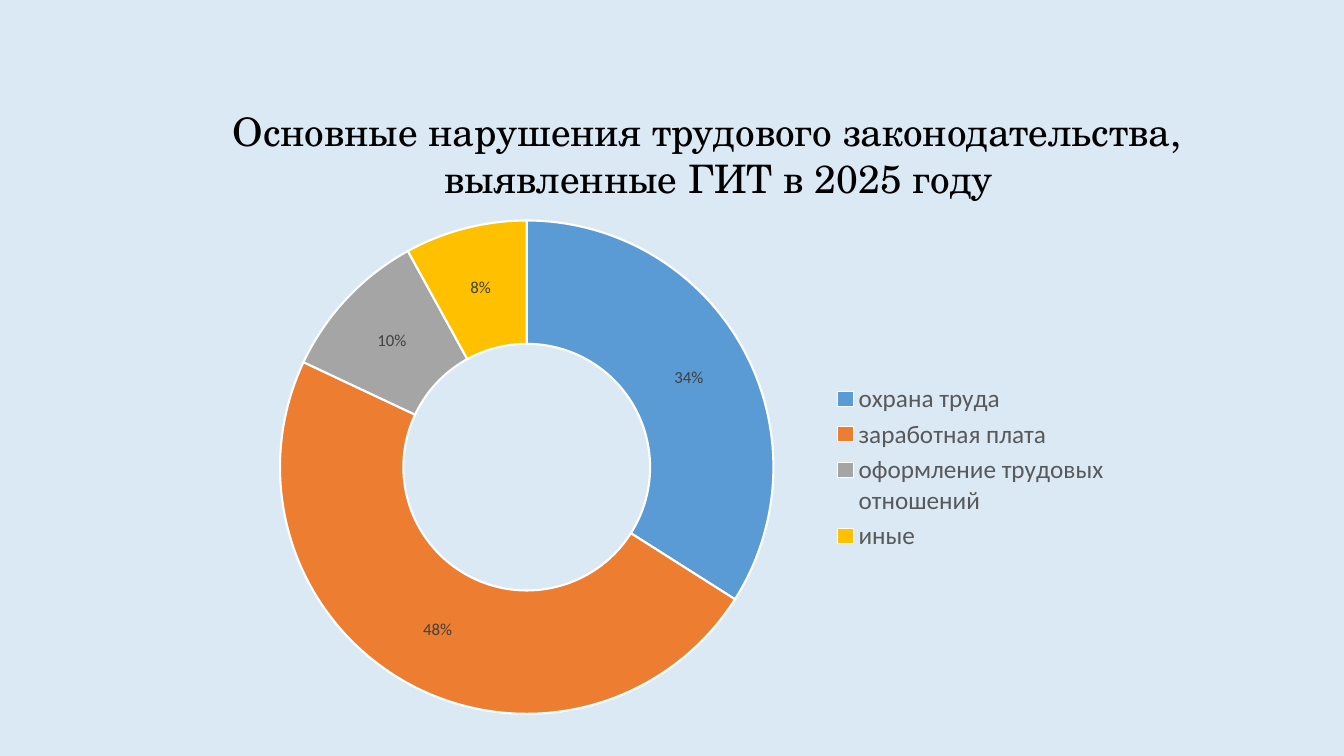
from pptx import Presentation
from pptx.chart.data import CategoryChartData
from pptx.dml.color import RGBColor
from pptx.enum.chart import XL_CHART_TYPE as ChartType, XL_LEGEND_POSITION as LegendPosition
from pptx.enum.text import MSO_ANCHOR as Anchor, MSO_AUTO_SIZE as AutoSize, PP_ALIGN as Align
from pptx.util import Inches, Pt

COLORS = {
    "background": "DBE9F5", "title": "000000", "legend": "595959",
    "labels": "404040", "border": "FFFFFF",
}
VIOLATIONS = [
    ("охрана труда", 0.34, "5B9BD5"),
    ("заработная плата", 0.48, "ED7D31"),
    ("оформление трудовых отношений", 0.10, "A5A5A5"),
    ("иные", 0.08, "FFC000"),
]


def style_font(font, name, size, color):
    font.name, font.size = name, Pt(size)
    font.color.rgb = RGBColor.from_string(COLORS[color])


prs = Presentation()
prs.slide_width, prs.slide_height = Inches(13.33), Inches(7.5)
slide = prs.slides.add_slide(prs.slide_layouts[5])
slide.background.fill.solid()
slide.background.fill.fore_color.rgb = RGBColor.from_string(COLORS["background"])

# Title
title = slide.shapes.title
title.left, title.top = Inches(2.21), Inches(1.01)
title.width, title.height = Inches(9.84), Inches(1.04)
heading = title.text_frame
heading.text = "Основные нарушения трудового законодательства,\nвыявленные ГИТ в 2025 году"
frame_format = {
    "word_wrap": False,
    "auto_size": AutoSize.SHAPE_TO_FIT_TEXT,
    "vertical_anchor": Anchor.TOP,
}
for attribute, value in frame_format.items():
    setattr(heading, attribute, value)
for line, alignment in zip(heading.paragraphs, (Align.LEFT, Align.CENTER)):
    line.alignment = alignment
    style_font(line.runs[0].font, "TeX Gyre Schola", 28, "title")

# Doughnut of violations
names, shares, slice_colors = zip(*VIOLATIONS)
violation_data = CategoryChartData(number_format="0%")
violation_data.categories = names
violation_data.add_series("Series 1", shares)
doughnut = slide.shapes.add_chart(
    ChartType.DOUGHNUT, Inches(2.22), Inches(2.05), Inches(8.89), Inches(5.17), violation_data
).chart
doughnut.has_title = False
style_font(doughnut.font, "Calibri", 10, "title")
plot = doughnut.plots[0]
plot.vary_by_categories = True
for hole in plot._element.xpath("c:holeSize"):
    hole.set("val", "75")

# Slices
violations = plot.series[0]
for index, color in enumerate(slice_colors):
    slice_format = violations.points[index].format
    slice_format.fill.solid()
    slice_format.fill.fore_color.rgb = RGBColor.from_string(color)
    slice_format.line.color.rgb = RGBColor.from_string(COLORS["border"])
    slice_format.line.width = Pt(1.5)

# Share labels
share_labels = violations.data_labels
label_format = {
    "show_value": True,
    "show_percentage": False,
    "number_format": "0%",
    "number_format_is_linked": False,
}
for attribute, value in label_format.items():
    setattr(share_labels, attribute, value)
style_font(share_labels.font, "Calibri", 12, "labels")

# Legend
doughnut.has_legend = True
doughnut.legend.position = LegendPosition.RIGHT
doughnut.legend.include_in_layout = False
style_font(doughnut.legend.font, "Calibri", 18, "legend")

prs.save("out.pptx")
